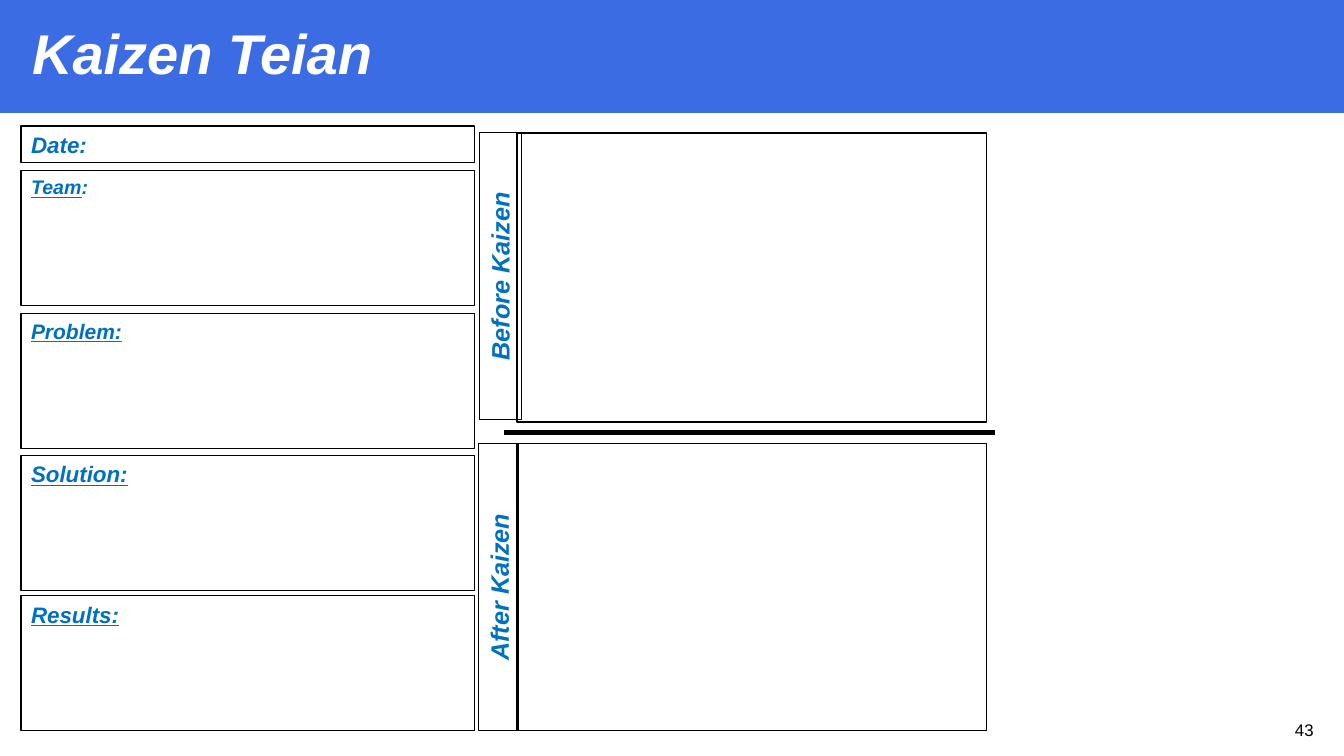
from pptx import Presentation
from pptx.dml.color import RGBColor
from pptx.enum.shapes import MSO_CONNECTOR as Connector, MSO_SHAPE as Shape
from pptx.enum.text import MSO_ANCHOR as Anchor, PP_ALIGN as Align
from pptx.oxml.ns import qn
from pptx.util import Pt
from lxml.etree import SubElement

BANNER_BLUE = RGBColor(0x3B, 0x6C, 0xE3)
LABEL_BLUE = RGBColor(0x00, 0x70, 0xC0)
WHITE = RGBColor(0xFF, 0xFF, 0xFF)
BLACK = RGBColor(0x00, 0x00, 0x00)

# Form fields: top, height, text size, underlined label, plain label
FIELDS = [
    (90, 26, 16, "", "Date:"),
    (121.7, 96.5, 14, "Team", ":"),
    (223.9, 96.5, 15, "Problem:", ""),
    (325.4, 96.5, 16, "Solution:", ""),
    (425.5, 96.5, 16, "Results:", ""),
]

# Stages: label, label box (left, top, width, height), sketch area top and height
STAGES = [
    ("Before Kaizen", (254.9, 182.2, 205.2, 30.2), 95, 206.6),
    ("After Kaizen", (253.4, 405.4, 205.2, 28.1), 316.8, 205.2),
]


def add_run(paragraph, text, size, color, emphasis=True, underline=False):
    run = paragraph.add_run()
    run.text = text
    font = run.font
    font.name = "Arial"
    font.size = Pt(size)
    font.color.rgb = color
    font.bold = font.italic = emphasis
    font.underline = underline


def add_box(slide, left, top, width, height, line_width=1):
    box = slide.shapes.add_shape(
        Shape.RECTANGLE, Pt(left), Pt(top), Pt(width), Pt(height))
    box.shadow.inherit = False
    box.fill.background()
    box.line.color.rgb = BLACK
    box.line.width = Pt(line_width)
    box.text_frame.word_wrap = True
    box.text_frame.vertical_anchor = Anchor.TOP
    box.text_frame.paragraphs[0].alignment = Align.LEFT
    return box


def add_header(slide):
    banner = add_box(slide, 0, 0, 960, 80.7)
    banner.fill.solid()
    banner.fill.fore_color.rgb = BANNER_BLUE
    banner.line.fill.background()

    title = slide.shapes.title
    title.left, title.top = Pt(15.8), Pt(14.4)
    title.width, title.height = Pt(286.6), Pt(51.8)
    title.text_frame.vertical_anchor = Anchor.MIDDLE
    heading = title.text_frame.paragraphs[0]
    heading.alignment = Align.LEFT
    heading.line_spacing = 0.9
    add_run(heading, "Kaizen Teian", 40, WHITE)
    # Keep the title in front of the banner
    title.element.addprevious(banner.element)


def add_field(slide, top, height, size, underlined, plain):
    field = add_box(slide, 15.1, top, 324, height)
    label = field.text_frame.paragraphs[0]
    if underlined:
        add_run(label, underlined, size, LABEL_BLUE, underline=True)
    if plain:
        add_run(label, plain, size, LABEL_BLUE)


def add_stage(slide, name, label_place, area_top, area_height):
    label_box = add_box(slide, *label_place, line_width=0.75)
    label_box.rotation = 270
    label = label_box.text_frame.paragraphs[0]
    label.alignment = Align.CENTER
    add_run(label, name, 18, LABEL_BLUE)
    add_box(slide, 369.4, area_top, 335.5, area_height)


def add_divider(slide, left, right, y):
    divider = slide.shapes.add_connector(
        Connector.STRAIGHT, Pt(left), Pt(y), Pt(right), Pt(y))
    divider.line.color.rgb = BLACK
    divider.line.width = Pt(3)
    SubElement(divider.element.spPr, qn("a:effectLst"))


def add_page_number(slide, number):
    number_box = slide.shapes.add_textbox(Pt(729.4), Pt(510.5), Pt(216), Pt(28.8))
    number_box.text_frame.word_wrap = True
    paragraph = number_box.text_frame.paragraphs[0]
    paragraph.alignment = Align.RIGHT
    add_run(paragraph, number, 12, BLACK, emphasis=False)


def main():
    deck = Presentation()
    deck.slide_width, deck.slide_height = Pt(960), Pt(540)
    slide = deck.slides.add_slide(deck.slide_layouts.get_by_name("Title Only"))

    # Banner and title
    add_header(slide)

    # Form on the left
    for field in FIELDS:
        add_field(slide, *field)

    # Before and after sketches
    for stage in STAGES:
        add_stage(slide, *stage)
    add_divider(slide, 360, 710.6, 308.9)

    # Footer
    add_page_number(slide, "43")

    deck.save("out.pptx")


if __name__ == "__main__":
    main()
